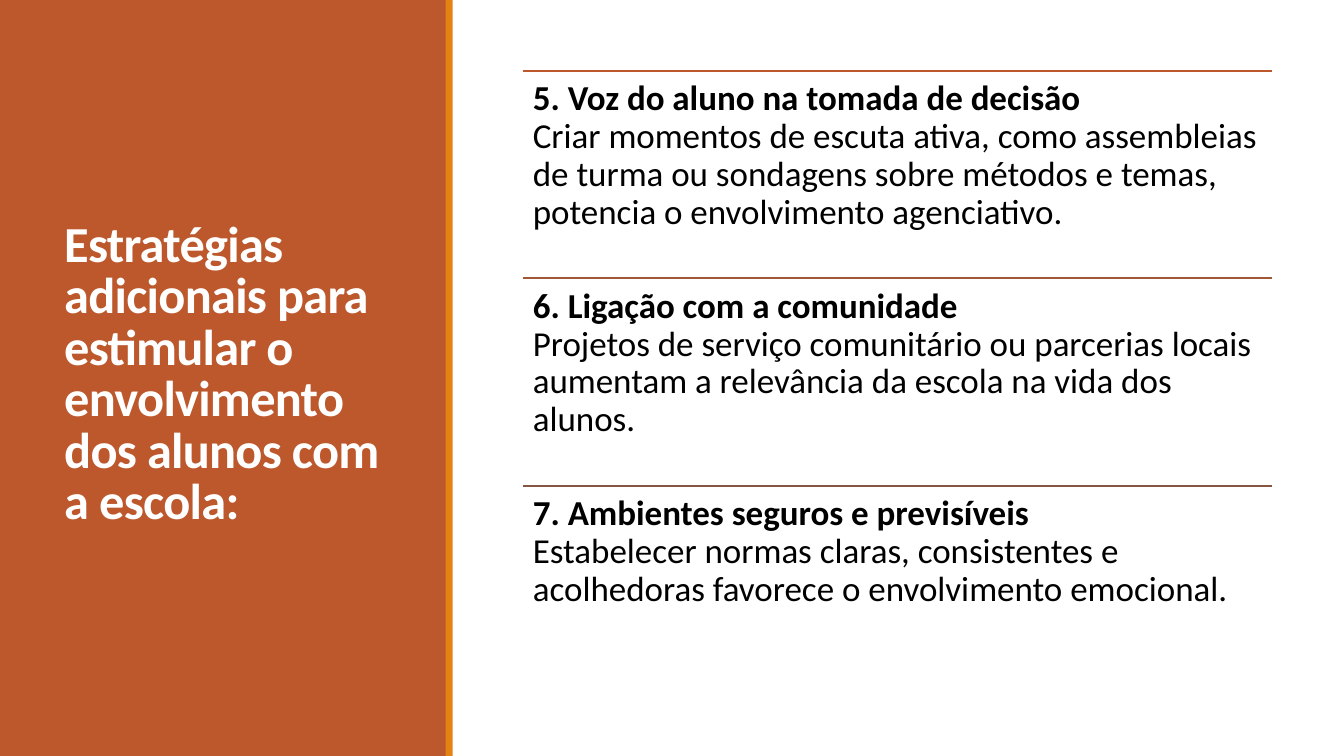
from dataclasses import dataclass

from lxml import etree
from pptx import Presentation
from pptx import util as u
from pptx.dml.color import RGBColor
from pptx.enum import shapes, text
from pptx.oxml import ns


@dataclass(frozen=True)
class Theme:
    font: str = "Calibri"
    panel: str = "BD582C"
    stripe: str = "E48312"
    title: str = "FFFFFF"
    body: str = "000000"
    rules: tuple = ("BD582C", "A05837", "865640")
    title_size: int = 36
    body_size: int = 25
    rule_width: float = 1.25


def add_bar(s, left, width, color):
    sp = s.shapes.add_shape(shapes.MSO_SHAPE.RECTANGLE, u.Cm(left), 0, u.Cm(width), prs.slide_height)
    sp.shadow.inherit = False
    sp.fill.solid()
    sp.fill.fore_color.rgb = RGBColor.from_string(color)
    sp.line.fill.background()


def add_text(s, left, top, width, height, content, size, color, spacing):
    sp = s.shapes.add_textbox(u.Cm(left), u.Cm(top), u.Cm(width), u.Cm(height))
    tf = sp.text_frame
    tf.word_wrap = True
    p = tf.paragraphs[0]
    p.text = content
    p.line_spacing = spacing
    for r in p.runs:
        r.font.name = theme.font
        r.font.size = u.Pt(size)
        r.font.color.rgb = RGBColor.from_string(color)
    p.runs[0].font.bold = True
    return tf


theme = Theme()
strategies = [
    ("5. Voz do aluno na tomada de decisão",
     "Criar momentos de escuta ativa, como assembleias de turma ou sondagens "
     "sobre métodos e temas, potencia o envolvimento agenciativo."),
    ("6. Ligação com a comunidade",
     "Projetos de serviço comunitário ou parcerias locais aumentam a relevância "
     "da escola na vida dos alunos."),
    ("7. Ambientes seguros e previsíveis",
     "Estabelecer normas claras, consistentes e acolhedoras favorece o "
     "envolvimento emocional."),
]

prs = Presentation()
prs.slide_width = u.Cm(33.87)
prs.slide_height = u.Cm(19.05)
s = prs.slides.add_slide(prs.slide_layouts[6])

add_bar(s, 0, 11.25, theme.panel)
tf = add_text(s, 1.37, 1.45, 8.56, 16.03,
              "Estratégias adicionais para estimular o envolvimento dos alunos com a escola:",
              theme.title_size, theme.title, 0.85)
tf.vertical_anchor = text.MSO_ANCHOR.MIDDLE
tf.paragraphs[0].runs[0]._r.get_or_add_rPr().set("spc", "-50")
add_bar(s, 11.23, 0.18, theme.stripe)

left, top, width, row_height = 13.18, 1.78, 18.87, 5.23
for i, ((heading, detail), color) in enumerate(zip(strategies, theme.rules)):
    y = top + i * row_height
    rule = s.shapes.add_connector(shapes.MSO_CONNECTOR.STRAIGHT,
                                  u.Cm(left), u.Cm(y), u.Cm(left + width), u.Cm(y))
    rule.line.color.rgb = RGBColor.from_string(color)
    rule.line.width = u.Pt(theme.rule_width)
    etree.SubElement(rule._element.spPr, ns.qn("a:effectLst"))
    tf = add_text(s, left, y, width, row_height, f"{heading}\n{detail}",
                  theme.body_size, theme.body, 0.9)
    tf.margin_left = tf.margin_right = tf.margin_top = tf.margin_bottom = u.Cm(0.25)

prs.save("out.pptx")
